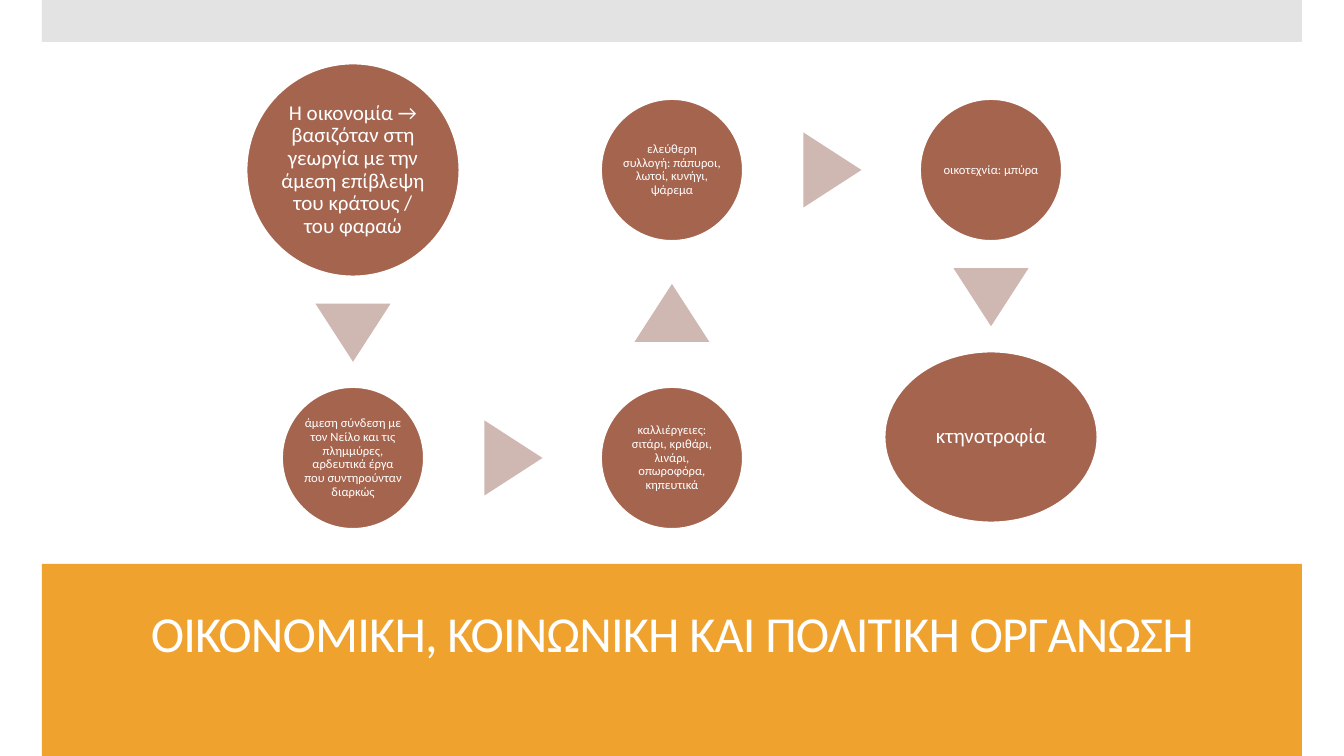
"""Build the slide on the economy as a six-step serpentine flow of circles."""
from itertools import pairwise

from lxml import etree
from pptx import Presentation, util as u
from pptx.dml.color import RGBColor
from pptx.enum import shapes, text
from pptx.oxml.ns import qn

TITLE = "ΟΙΚΟΝΟΜΙΚΗ, ΚΟΙΝΩΝΙΚΗ ΚΑΙ ΠΟΛΙΤΙΚΗ ΟΡΓΑΝΩΣΗ"
LARGE, SMALL, OVAL = (213, 213, 15, 2), (142, 142, 9, 1), (213, 171, 15, 2)
STEPS = [
    ("Η οικονομία → βασιζόταν στη γεωργία με την άμεση επίβλεψη του κράτους / του φαραώ",
     0, 170, LARGE),
    ("άμεση σύνδεση με τον Νείλο και τις πλημμύρες, αρδευτικά έργα που συντηρούνταν διαρκώς",
     0, 458, SMALL),
    ("καλλιέργειες: σιτάρι, κριθάρι, λινάρι, οπωροφόρα, κηπευτικά", 1, 458, SMALL),
    ("ελεύθερη συλλογή: πάπυροι, λωτοί, κυνήγι, ψάρεμα", 1, 170, SMALL),
    ("οικοτεχνία: μπύρα", 2, 170, SMALL),
    ("κτηνοτροφία", 2, 437, OVAL),
]

FONT = "Calibri"
WHITE = RGBColor(0xFF, 0xFF, 0xFF)
ORANGE = RGBColor(0xF0, 0xA2, 0x2E)
GREY = RGBColor(0xC8, 0xC8, 0xC8)
BROWN = RGBColor(0xA5, 0x64, 0x4E)
PALE = RGBColor(0xCF, 0xB8, 0xB2)

WIDTH, HEIGHT, MARGIN = 1344, 756, 42
BAND_TOP = 564
FIRST_COLUMN, COLUMN_PITCH = 353, 319
ARROW_WIDTH, ARROW_HEIGHT, ARROW_SHIFT = 75, 58, 1


def px(length):
    return u.Emu(round(length * 914400 / 100.8))


def add_shape(slide, kind, left, top, width, height, color):
    shape = slide.shapes.add_shape(kind, px(left), px(top), px(width), px(height))
    shape.shadow.inherit = False
    shape.fill.solid()
    shape.fill.fore_color.rgb = color
    shape.line.fill.background()
    return shape


def write(shape, words, size):
    frame = shape.text_frame
    frame.word_wrap = True
    frame.vertical_anchor = text.MSO_ANCHOR.MIDDLE
    paragraph = frame.paragraphs[0]
    paragraph.alignment = text.PP_ALIGN.CENTER
    paragraph.line_spacing = 0.9
    run = paragraph.add_run()
    run.text = words
    run.font.name = FONT
    run.font.size = u.Pt(size)
    run.font.color.rgb = WHITE
    return run


def add_step(slide, words, column, center_y, style):
    width, height, size, inset = style
    center_x = FIRST_COLUMN + column * COLUMN_PITCH
    circle = add_shape(slide, shapes.MSO_SHAPE.OVAL, center_x - width / 2,
                       center_y - height / 2, width, height, BROWN)
    circle.line.color.rgb = WHITE
    circle.line.width = u.Pt(1.35)
    frame = circle.text_frame
    frame.margin_left = frame.margin_right = px(inset)
    frame.margin_top = frame.margin_bottom = px(inset)
    write(circle, words, size)


def add_arrow(slide, source, target):
    _, column, source_y, (source_width, source_height, *_) = source
    _, next_column, target_y, (target_width, target_height, *_) = target
    source_x = FIRST_COLUMN + column * COLUMN_PITCH
    target_x = FIRST_COLUMN + next_column * COLUMN_PITCH
    center_x, center_y = source_x, source_y
    if column != next_column:
        center_x = (source_x + target_x + (source_width - target_width) / 2) / 2 + ARROW_SHIFT
        rotation = 90
    else:
        direction = 1 if target_y > source_y else -1
        edge_shift = direction * (source_height - target_height) / 2
        center_y = (source_y + target_y + edge_shift) / 2 + direction * ARROW_SHIFT
        rotation = 180 if direction == 1 else 0
    arrow = add_shape(slide, shapes.MSO_SHAPE.ISOSCELES_TRIANGLE, center_x - ARROW_WIDTH / 2,
                      center_y - ARROW_HEIGHT / 2, ARROW_WIDTH, ARROW_HEIGHT, PALE)
    arrow.rotation = rotation


def main():
    presentation = Presentation()
    presentation.slide_width, presentation.slide_height = px(WIDTH), px(HEIGHT)
    slide = presentation.slides.add_slide(presentation.slide_layouts[6])

    band_width = WIDTH - 2 * MARGIN
    rectangle = shapes.MSO_SHAPE.RECTANGLE
    add_shape(slide, rectangle, MARGIN, BAND_TOP, band_width, HEIGHT - BAND_TOP, ORANGE)
    top_band = add_shape(slide, rectangle, MARGIN, 0, band_width, MARGIN, GREY)
    grey_fill = top_band.fill._xPr.find(qn("a:solidFill"))
    etree.SubElement(grey_fill[0], qn("a:alpha"), val="50000")

    title = slide.shapes.add_textbox(px(71), px(580), px(1203), px(113))
    title_run = write(title, TITLE, 36)
    title_run.font._element.set("spc", "-60")

    for step in STEPS:
        add_step(slide, *step)
    for source, target in pairwise(STEPS):
        add_arrow(slide, source, target)
    presentation.save("out.pptx")


if __name__ == "__main__":
    main()
